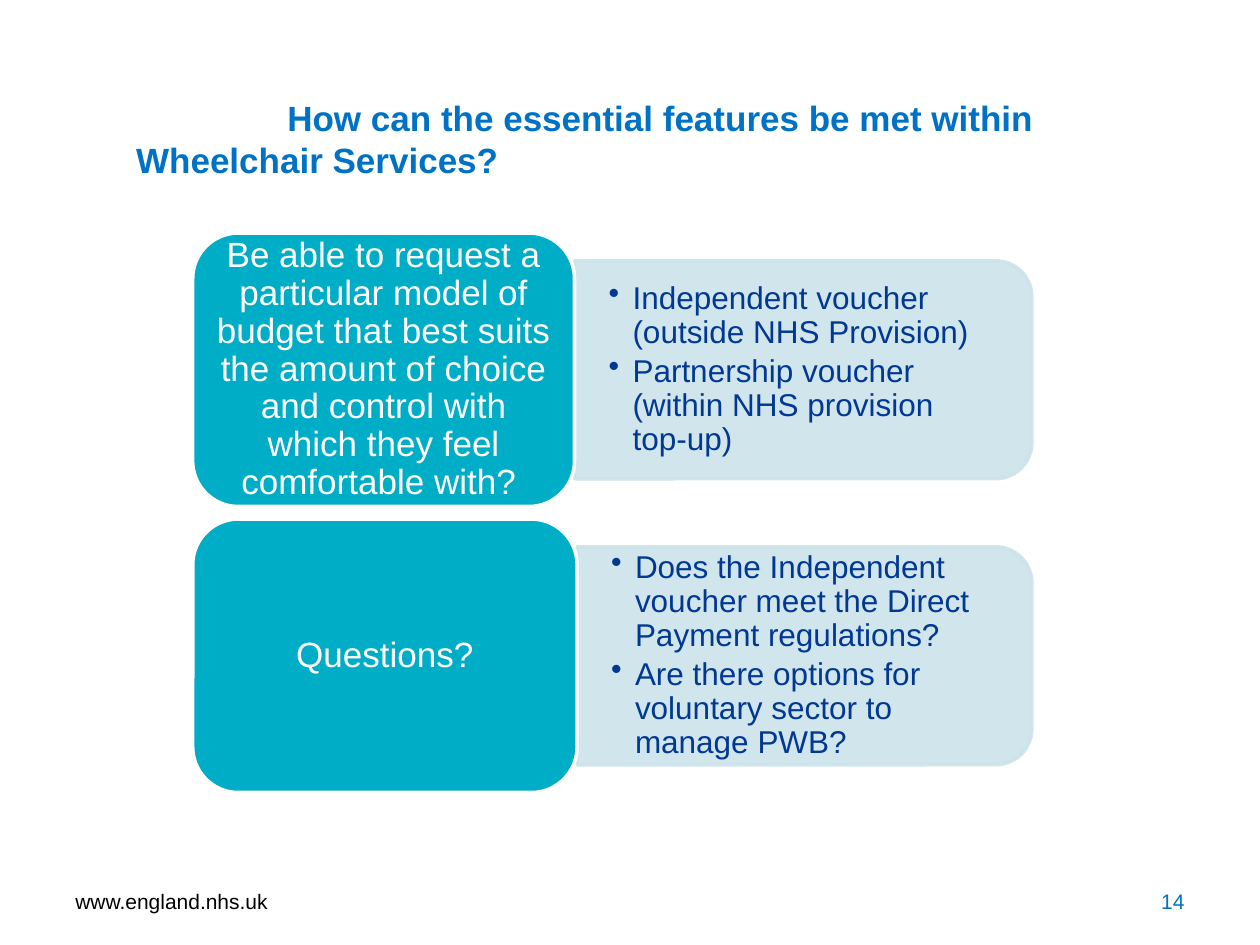
"""Builds the slide on meeting the essential features within Wheelchair Services."""
import pptx
import pptx.util
import pptx.dml.color
import pptx.enum.shapes
import pptx.enum.text
import pptx.oxml.ns
from lxml import etree

In, Pt = pptx.util.Inches, pptx.util.Pt
SHAPE = pptx.enum.shapes.MSO_SHAPE
ALIGN = pptx.enum.text.PP_ALIGN
qn = pptx.oxml.ns.qn

THEME = dict(font="Arial", title_color="0072C6", footer_color="000000", box="00ADC6",
             box_text="FFFFFF", panel="CCE3EA", panel_text="003893",
             title=20, heading=20, bullet=18, footer=12)
TITLE = "How can the essential features be met within\vWheelchair Services?"
FOOTER, NUMBER = "www.england.nhs.uk", "14"
ROWS = [
    ("Be able to request a particular model of budget that best suits the amount of "
     "choice and control with which they feel comfortable with? ", 3.03,
     ["Independent voucher (outside NHS Provision)",
      "Partnership voucher (within NHS provision top-up)"]),
    ("Questions?", 3.05,
     ["Does the Independent voucher meet the Direct Payment regulations?",
      "Are there options for voluntary sector to manage PWB?"]),
]
LEFT, RIGHT, TOP = 1.53, 8.19, 1.85
BOX_H, PANEL_H, PITCH = 2.17, 1.73, 2.27


def rgb(value):
    return pptx.dml.color.RGBColor.from_string(value)


def write(sp, paragraphs, size, color, align=ALIGN.LEFT, bold=False, bullet=False,
          first=0, spacing=None, after=0, inset=(0.1, 0.05)):
    tf = sp.text_frame
    tf.word_wrap = True
    tf.auto_size = pptx.enum.text.MSO_AUTO_SIZE.NONE
    tf.vertical_anchor = pptx.enum.text.MSO_ANCHOR.MIDDLE
    tf.margin_left = tf.margin_right = In(inset[0])
    tf.margin_top = tf.margin_bottom = In(inset[1])
    for i, text in enumerate(paragraphs):
        p = tf.paragraphs[0] if i == 0 else tf.add_paragraph()
        p.text = text
        p.alignment = align
        p.space_before, p.space_after = Pt(0), Pt(after)
        if spacing:
            p.line_spacing = spacing
        pPr = p._p.get_or_add_pPr()
        if bullet:
            pPr.set("marL", str(In(0.19)))
            pPr.set("indent", str(In(-0.19)))
            etree.SubElement(pPr, qn("a:buChar")).set("char", "•")
        elif first:
            pPr.set("marL", "0")
            pPr.set("indent", str(In(first)))
        for r in p.runs:
            r.font.name, r.font.size, r.font.bold = THEME["font"], Pt(size), bold
            r.font.color.rgb = rgb(color)


def add_text(s, x, y, w, h, paragraphs, **fmt):
    write(s.shapes.add_textbox(In(x), In(y), In(w), In(h)), paragraphs, **fmt)


def add_block(s, kind, x, y, w, h, fill, line, alpha=None):
    sp = s.shapes.add_shape(kind, In(x), In(y), In(w), In(h))
    sp.shadow.inherit = False
    sp.fill.solid()
    sp.fill.fore_color.rgb = rgb(fill)
    sp.line.color.rgb = rgb(line)
    sp.line.width = Pt(2)
    if alpha:
        for clr in sp._element.spPr.iter(qn("a:srgbClr")):
            etree.SubElement(clr, qn("a:alpha")).set("val", str(alpha * 1000))
    return sp


def add_row(s, y, heading, box_w, bullets):
    x, mid = LEFT + box_w, y + BOX_H / 2
    panel_w = RIGHT - x
    panel = add_block(s, SHAPE.ROUND_2_SAME_RECTANGLE, x + (panel_w - PANEL_H) / 2,
                      mid - panel_w / 2, PANEL_H, panel_w, THEME["panel"], THEME["panel"], 90)
    panel.rotation = 90
    add_text(s, x, mid - PANEL_H / 2, panel_w - 0.08, PANEL_H, bullets,
             size=THEME["bullet"], color=THEME["panel_text"], bullet=True,
             spacing=0.9, after=3, inset=(0.27, 0.14))
    box = add_block(s, SHAPE.ROUNDED_RECTANGLE, LEFT, y, box_w, BOX_H,
                    THEME["box"], THEME["box_text"])
    write(box, [heading], THEME["heading"], THEME["box_text"], align=ALIGN.CENTER,
          spacing=0.9, inset=(0.08, 0.04))


def main():
    prs = pptx.Presentation()
    prs.slide_width, prs.slide_height = In(10), In(7.5)
    s = prs.slides.add_slide(prs.slide_layouts[5])
    title = s.shapes.title
    title.left, title.top, title.width, title.height = In(0.98), In(0.7), In(7.71), In(0.8)
    write(title, [TITLE], THEME["title"], THEME["title_color"], bold=True, first=1.2)
    for i, row in enumerate(ROWS):
        add_row(s, TOP + i * PITCH, *row)
    add_text(s, 0.5, 6.95, 2.33, 0.4, [FOOTER],
             size=THEME["footer"], color=THEME["footer_color"])
    add_text(s, 7.17, 6.95, 2.33, 0.4, [NUMBER],
             size=THEME["footer"], color=THEME["title_color"], align=ALIGN.RIGHT)
    prs.save("out.pptx")


if __name__ == "__main__":
    main()
